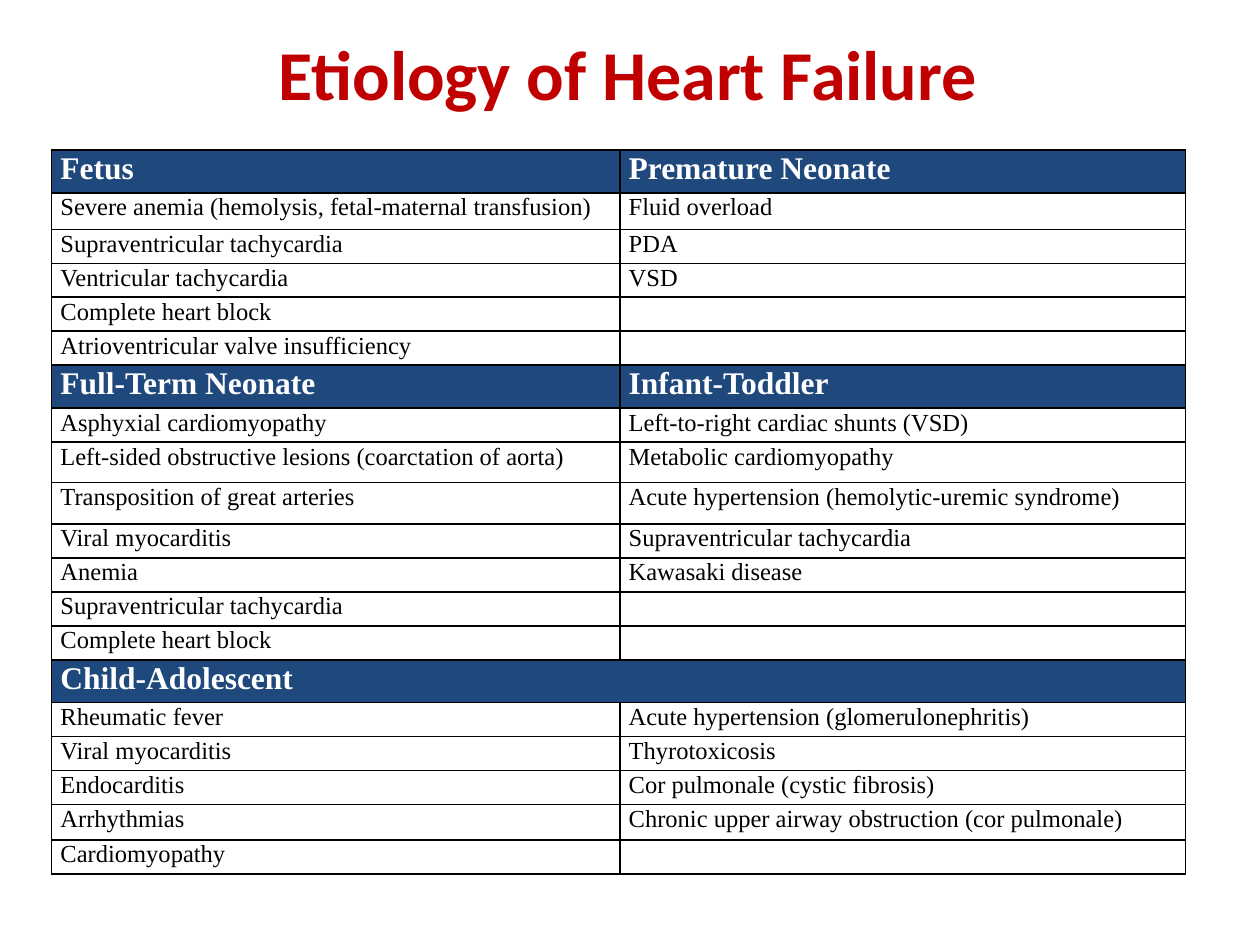
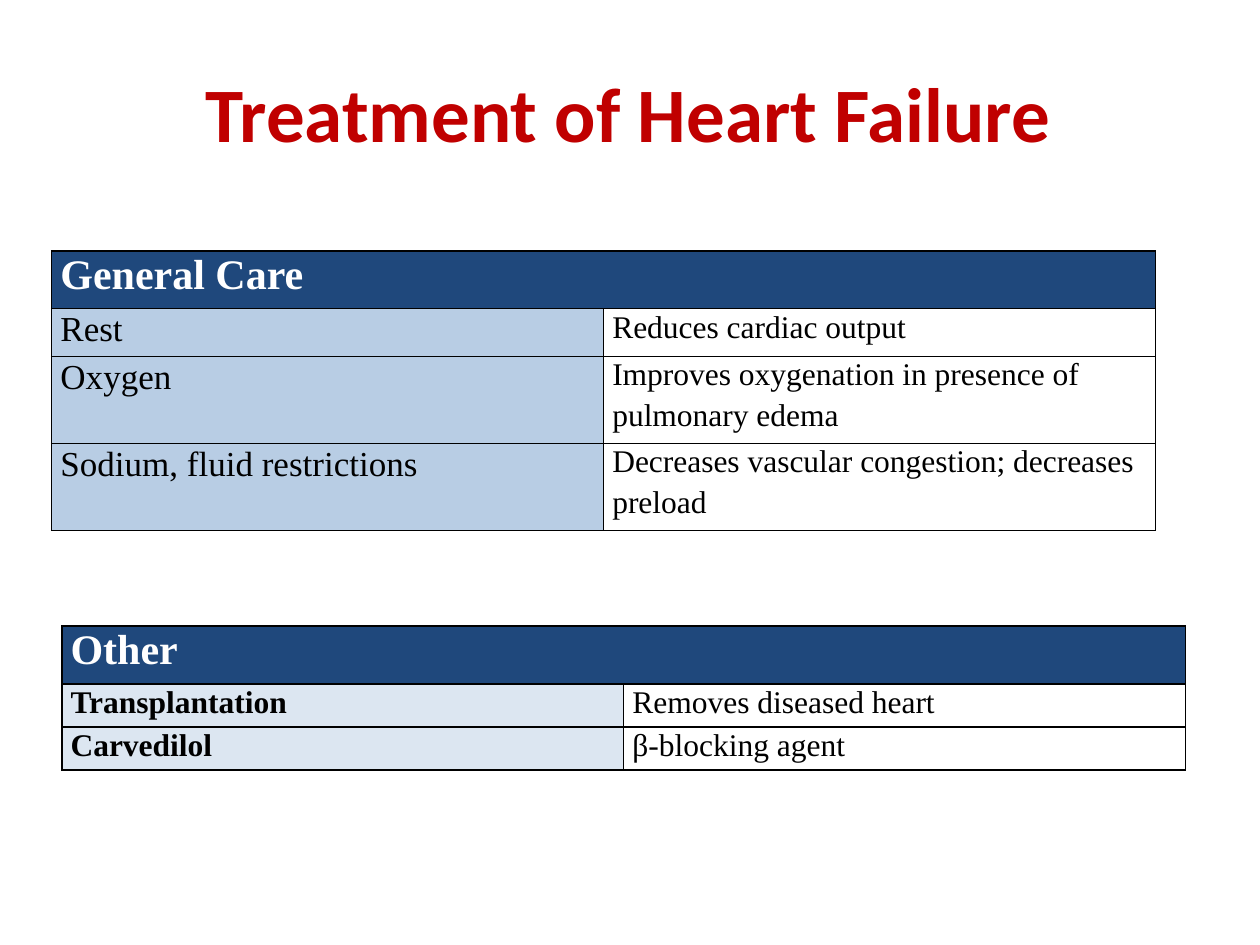
from pptx import Presentation
from pptx.dml.color import RGBColor
from pptx.enum.text import MSO_ANCHOR, PP_ALIGN
from pptx.oxml import parse_xml
from pptx.oxml.ns import nsdecls
from pptx.util import Inches, Pt

RED, NAVY, WHITE, BLACK = "C00000", "1F487C", "FFFFFF", "000000"
MID_BLUE, PALE_BLUE = "B8CDE4", "DCE6F1"
TITLE_FONT, TABLE_FONT = "Calibri", "Times New Roman"


def style(font, name, size, color, bold):
    font.name, font.size, font.bold = name, Pt(size), bold
    font.color.rgb = RGBColor.from_string(color)


def add_table(s, left, top, col_widths, heights, rows, head_size, sizes,
              label_fill=None, label_bold=False):
    """Draw rows of (is_header, texts); a header with one text spans both columns."""
    frame = s.shapes.add_table(len(rows), 2, Inches(left), Inches(top),
                               Inches(sum(col_widths)), Inches(sum(heights)))
    table = frame.table
    table.first_row = table.horz_banding = False
    for col, width in zip(table.columns, col_widths):
        col.width = Inches(width)
    for i, (is_header, texts) in enumerate(rows):
        table.rows[i].height = Inches(heights[i])
        if len(texts) == 1:
            table.cell(i, 0).merge(table.cell(i, 1))
        for j in range(2):
            cell = table.cell(i, j)
            cell.margin_left, cell.margin_top = Inches(0.07), Inches(0.01)
            cell.margin_right = cell.margin_bottom = 0
            fill = NAVY if is_header else label_fill if j == 0 else None
            tc_pr = cell._tc.get_or_add_tcPr()
            for side in ("lnL", "lnR", "lnT", "lnB"):
                tc_pr.append(parse_xml(
                    f'<a:{side} {nsdecls("a")} w="12700"><a:solidFill>'
                    f'<a:srgbClr val="{BLACK}"/></a:solidFill></a:{side}>'))
            if fill:
                cell.fill.solid()
                cell.fill.fore_color.rgb = RGBColor.from_string(fill)
            else:
                cell.fill.background()
            size = head_size if is_header else sizes[j]
            text = texts[j] if j < len(texts) else ""
            if not text:
                end = cell.text_frame.paragraphs[0]._p.get_or_add_endParaRPr()
                end.set("sz", str(size * 100))
                continue
            cell.text_frame.text = text
            for k, p in enumerate(cell.text_frame.paragraphs):
                p.space_before = Pt(3.2 if k else 0.7)
                for r in p.runs:
                    style(r.font, TABLE_FONT, size, WHITE if is_header else BLACK,
                          is_header or (label_bold and j == 0))


prs = Presentation()
prs.slide_width, prs.slide_height = Inches(10), Inches(7.5)

# Titles
titles = [
    ("Etiology of Heart Failure", 40, (2.21, 0.23, 5.58, 0.69)),
    ("Treatment of Heart Failure", 44, (1.63, 0.51, 6.74, 0.76)),
]
slides = []
for text, size, box in titles:
    s = prs.slides.add_slide(prs.slide_layouts[5])
    title = s.shapes.title
    title.left, title.top, title.width, title.height = map(Inches, box)
    tf = title.text_frame
    tf.text = text
    tf.margin_left = tf.margin_right = tf.margin_bottom = 0
    tf.margin_top = Inches(0.01)
    tf.vertical_anchor = MSO_ANCHOR.TOP
    tf.word_wrap = True
    p = tf.paragraphs[0]
    p.alignment = PP_ALIGN.LEFT
    p.space_before = Pt(1)
    style(p.runs[0].font, TITLE_FONT, size, RED, True)
    slides.append(s)
etiology, treatment = slides

# Causes by age group
age_groups = [
    (("Fetus", "Premature Neonate"), [
        ("Severe anemia (hemolysis, fetal-maternal transfusion)", "Fluid overload"),
        ("Supraventricular tachycardia", "PDA"),
        ("Ventricular tachycardia", "VSD"),
        ("Complete heart block", ""),
        ("Atrioventricular valve insufficiency", ""),
    ]),
    (("Full-Term Neonate", "Infant-Toddler"), [
        ("Asphyxial cardiomyopathy", "Left-to-right cardiac shunts (VSD)"),
        ("Left-sided obstructive lesions (coarctation of aorta)",
         "Metabolic cardiomyopathy"),
        ("Transposition of great arteries",
         "Acute hypertension (hemolytic-uremic syndrome)"),
        ("Viral myocarditis", "Supraventricular tachycardia"),
        ("Anemia", "Kawasaki disease"),
        ("Supraventricular tachycardia", ""),
        ("Complete heart block", ""),
    ]),
    (("Child-Adolescent",), [
        ("Rheumatic fever", "Acute hypertension (glomerulonephritis)"),
        ("Viral myocarditis", "Thyrotoxicosis"),
        ("Endocarditis", "Cor pulmonale (cystic fibrosis)"),
        ("Arrhythmias", "Chronic upper airway obstruction (cor pulmonale)"),
        ("Cardiomyopathy", ""),
    ]),
]
cause_rows = []
for header, causes in age_groups:
    cause_rows.append((True, header))
    cause_rows += [(False, pair) for pair in causes]
tall_rows = {1: 0.29, 8: 0.32, 9: 0.33, 18: 0.28}
cause_heights = [0.34 if is_header else tall_rows.get(i, 0.27)
                 for i, (is_header, _) in enumerate(cause_rows)]
add_table(etiology, 0.41, 1.19, (4.51, 4.49), cause_heights, cause_rows, 18, (14, 14))

# Treatments
general_care = [
    (True, ("General Care",)),
    (False, ("Rest", "Reduces cardiac output")),
    (False, ("Oxygen", "Improves oxygenation in presence of\npulmonary edema")),
    (False, ("Sodium, fluid restrictions",
             "Decreases vascular congestion; decreases\npreload")),
]
add_table(treatment, 0.41, 1.99, (4.38, 4.38), (0.46, 0.38, 0.69, 0.69),
          general_care, 24, (20, 18), MID_BLUE)

other_care = [
    (True, ("Other",)),
    (False, ("Transplantation", "Removes diseased heart")),
    (False, ("Carvedilol", "β-blocking agent")),
]
add_table(treatment, 0.49, 4.97, (4.46, 4.46), (0.46, 0.34, 0.34),
          other_care, 24, (18, 18), PALE_BLUE, label_bold=True)

prs.save("out.pptx")
